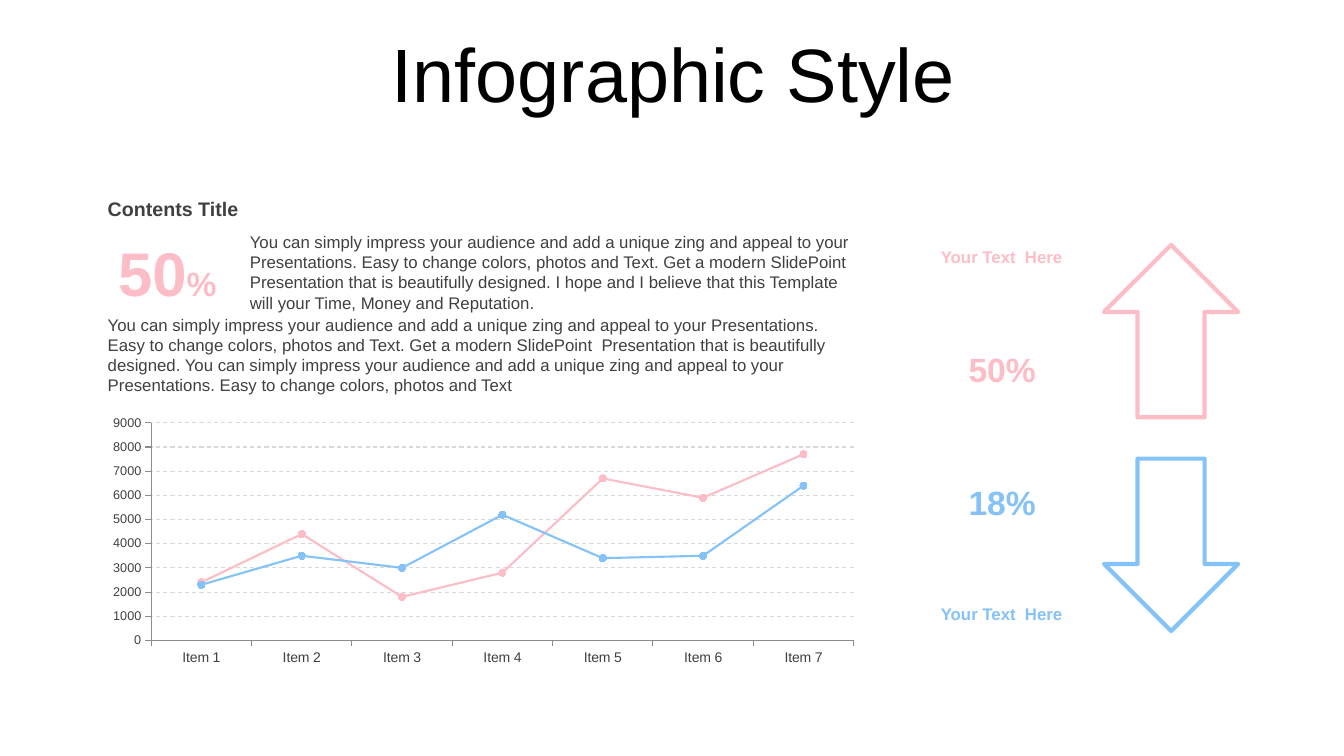
from pptx import Presentation
from pptx.chart.data import CategoryChartData
from pptx.dml.color import RGBColor
from pptx.enum.chart import XL_CHART_TYPE, XL_MARKER_STYLE, XL_TICK_MARK
from pptx.enum.dml import MSO_LINE
from pptx.enum.shapes import MSO_SHAPE
from pptx.enum.text import MSO_ANCHOR, PP_ALIGN
from pptx.util import Inches, Pt

PINK = RGBColor(0xFD, 0xBD, 0xC7)
BLUE = RGBColor(0x85, 0xC2, 0xF8)
DARK = RGBColor(0x40, 0x40, 0x40)
GRAY = RGBColor(0x8C, 0x8C, 0x8C)
PALE = RGBColor(0xD9, 0xD9, 0xD9)
BLACK = RGBColor(0, 0, 0)

deck = Presentation()
deck.slide_width = Inches(13.33)
deck.slide_height = Inches(7.5)
slide = deck.slides.add_slide(deck.slide_layouts[6])


def style(font, size, color, bold=False):
    font.name = "Arial"
    font.size = Pt(size)
    font.bold = bold
    font.color.rgb = color


def label(text, left, top, width, height, size, color, bold=False,
          align=PP_ALIGN.LEFT, anchor=MSO_ANCHOR.TOP):
    box = slide.shapes.add_textbox(
        Inches(left), Inches(top), Inches(width), Inches(height))
    frame = box.text_frame
    frame.word_wrap = True
    frame.vertical_anchor = anchor
    para = frame.paragraphs[0]
    para.text = text
    para.alignment = align
    style(para.font, size, color, bold)
    return para


mid = {"align": PP_ALIGN.CENTER, "anchor": MSO_ANCHOR.MIDDLE}
title = label("Infographic Style", 0.35, 0.31, 12.66, 0.92, 54, BLACK, **mid)
title.line_spacing = 0.9

trends = [
    ("50%", PINK, 2.43, 0, 3.41, 2.4),
    ("18%", BLUE, 4.55, 180, 4.73, 5.94),
]
for value, color, top, turn, mark, note in trends:
    arrow = slide.shapes.add_shape(
        MSO_SHAPE.UP_ARROW, Inches(10.95), Inches(top), Inches(1.33), Inches(1.71))
    arrow.shadow.inherit = False
    arrow.rotation = turn
    arrow.fill.background()
    arrow.line.color.rgb = color
    arrow.line.width = Pt(3)
    label(value, 9.43, mark, 1.02, 0.5, 24, color, True, **mid)
    label("Your Text  Here", 9.1, note, 1.67, 0.3, 12, color, True, PP_ALIGN.CENTER)

share = label("50", 0.97, 2.28, 1.38, 0.84, 44, PINK, True, **mid)
sign = share.add_run()
sign.text = "%"
sign.font.size = Pt(24)

lead = ("You can simply impress your audience and add a unique zing and appeal "
        "to your Presentations. Easy to change colors, photos and Text")
pitch = lead + (". Get a modern SlidePoint  Presentation that is "
                "beautifully designed. ")
label(pitch + "I hope and I believe that this Template will your Time, "
      "Money and Reputation.", 2.38, 2.25, 6.23, 0.91, 12, DARK)
label(pitch + lead, 0.97, 3.07, 7.65, 0.91, 12, DARK)
label("Contents Title", 0.97, 1.9, 2.75, 0.34, 14, DARK, True)

data = CategoryChartData(number_format="General")
data.categories = [f"Item {n}" for n in range(1, 8)]
data.add_series("Series 1", (2400, 4400, 1800, 2800, 6700, 5900, 7700))
data.add_series("Series 2", (2300, 3500, 3000, 5200, 3400, 3500, 6400))
chart = slide.shapes.add_chart(
    XL_CHART_TYPE.LINE_MARKERS, Inches(0.97), Inches(4.07),
    Inches(7.65), Inches(2.59), data).chart
chart.has_legend = False
chart.has_title = False
style(chart.font, 18, BLACK)
chart.plots[0].vary_by_categories = False

for axis, size in ((chart.category_axis, 10), (chart.value_axis, 9)):
    style(axis.tick_labels.font, size, DARK)
    axis.major_tick_mark = XL_TICK_MARK.OUTSIDE
    axis.minor_tick_mark = XL_TICK_MARK.NONE
    axis.format.line.color.rgb = GRAY
    axis.format.line.width = Pt(0.75)

scale = chart.value_axis
scale.minimum_scale = 0
scale.maximum_scale = 9000
scale.major_unit = 1000
scale.has_major_gridlines = True
grid = scale.major_gridlines.format.line
grid.color.rgb = PALE
grid.width = Pt(0.75)
grid.dash_style = MSO_LINE.DASH

for line, color in zip(chart.plots[0].series, (PINK, BLUE)):
    line.smooth = False
    line.format.line.color.rgb = color
    line.format.line.width = Pt(1.5)
    dot = line.marker
    dot.style = XL_MARKER_STYLE.CIRCLE
    dot.size = 5
    dot.format.fill.solid()
    dot.format.fill.fore_color.rgb = color
    dot.format.line.color.rgb = color

deck.save("out.pptx")
